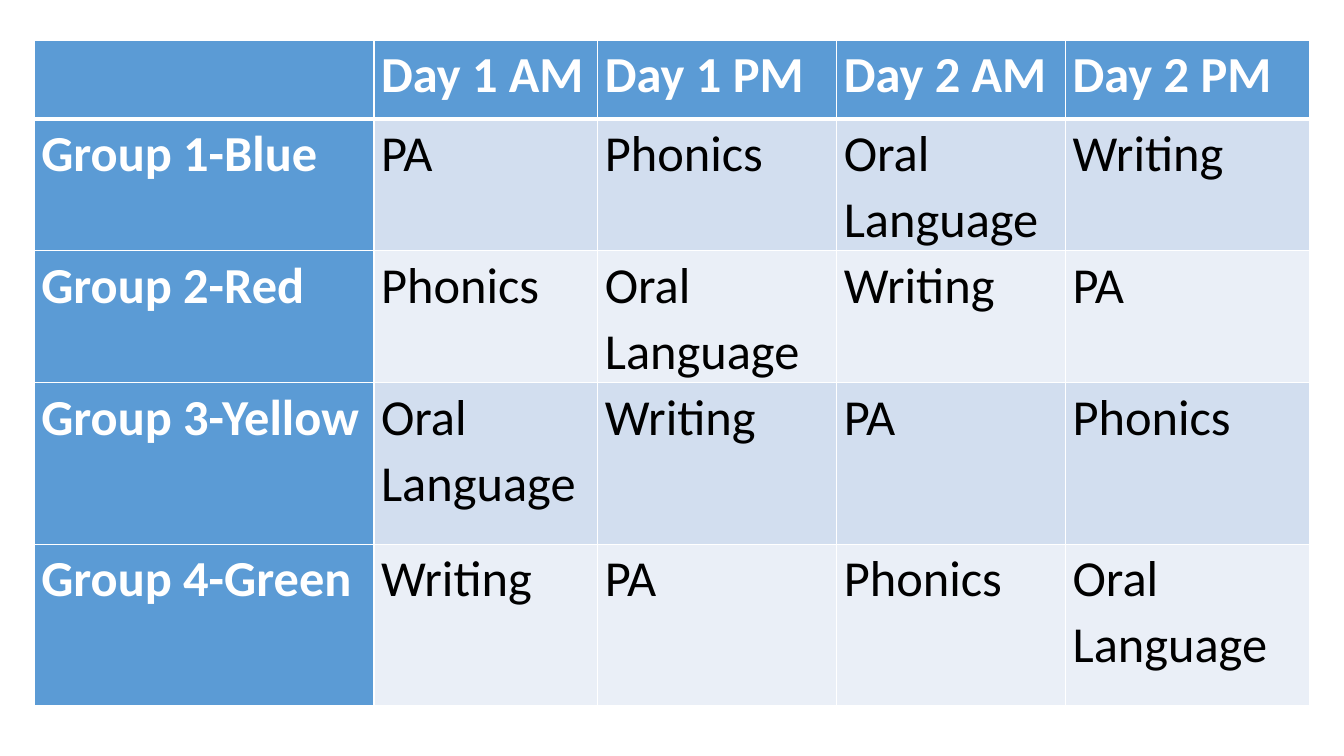
from lxml.etree import SubElement
from pptx import Presentation
from pptx.dml.color import RGBColor
from pptx.oxml.ns import qn
from pptx.util import Inches, Pt

WHITE = RGBColor(0xFF, 0xFF, 0xFF)
BLACK = RGBColor(0x00, 0x00, 0x00)
BLUE = RGBColor(0x5B, 0x9B, 0xD5)
BANDS = [RGBColor(0xD2, 0xDE, 0xEF), RGBColor(0xEA, 0xEF, 0xF7)]

DAYS = ["Day 1 AM", "Day 1 PM", "Day 2 AM", "Day 2 PM"]
GROUPS = ["Group 1-Blue", "Group 2-Red", "Group 3-Yellow", "Group 4-Green"]
TOPICS = ["PA", "Phonics", "Oral Language", "Writing"]
WIDTHS = [3.37, 2.22, 2.37, 2.27, 2.42]
HEIGHTS = [0.78, 1.3, 1.3, 1.6, 1.6]


class Page:
    font = "Calibri"
    size = Pt(36)

    def __init__(self, deck):
        self.slide = deck.slides.add_slide(deck.slide_layouts[6])

    def table(self, left, top, widths, heights, rows):
        frame = self.slide.shapes.add_table(
            len(heights), len(widths), Inches(left), Inches(top),
            Inches(sum(widths)), Inches(sum(heights)))
        grid = frame.table
        grid.first_col = True
        for col, width in zip(grid.columns, widths):
            col.width = Inches(width)
        for row, height in zip(grid.rows, heights):
            row.height = Inches(height)
        for r, texts in enumerate(rows):
            for c, text in enumerate(texts):
                head = r == 0 or c == 0
                cell = grid.cell(r, c)
                self.border(cell, "L", 1)
                self.border(cell, "R", 1)
                self.border(cell, "T", 3 if r == 1 else 1)
                self.border(cell, "B", 3 if r == 0 else 1)
                cell.fill.solid()
                cell.fill.fore_color.rgb = BLUE if head else BANDS[(r - 1) % 2]
                self.label(cell, text, head)

    def border(self, cell, side, width):
        props = cell._tc.get_or_add_tcPr()
        line = SubElement(props, qn("a:ln" + side), w=str(Pt(width)))
        fill = SubElement(line, qn("a:solidFill"))
        SubElement(fill, qn("a:srgbClr"), val=str(WHITE))

    def label(self, cell, text, head):
        cell.margin_left = cell.margin_right = Inches(0.07)
        cell.margin_top = cell.margin_bottom = 0
        para = cell.text_frame.paragraphs[0]
        para.line_spacing = 1.07
        if not text:
            return
        run = para.add_run()
        run.text = text
        run.font.name = self.font
        run.font.size = self.size
        run.font.bold = head
        run.font.color.rgb = WHITE if head else BLACK


def main():
    deck = Presentation()
    deck.slide_width = Inches(13.33)
    deck.slide_height = Inches(7.5)
    rows = [["", *DAYS]]
    for turn, group in enumerate(GROUPS):
        rows.append([group, *TOPICS[turn:], *TOPICS[:turn]])
    Page(deck).table(0.34, 0.4, WIDTHS, HEIGHTS, rows)
    deck.save("out.pptx")


if __name__ == "__main__":
    main()
